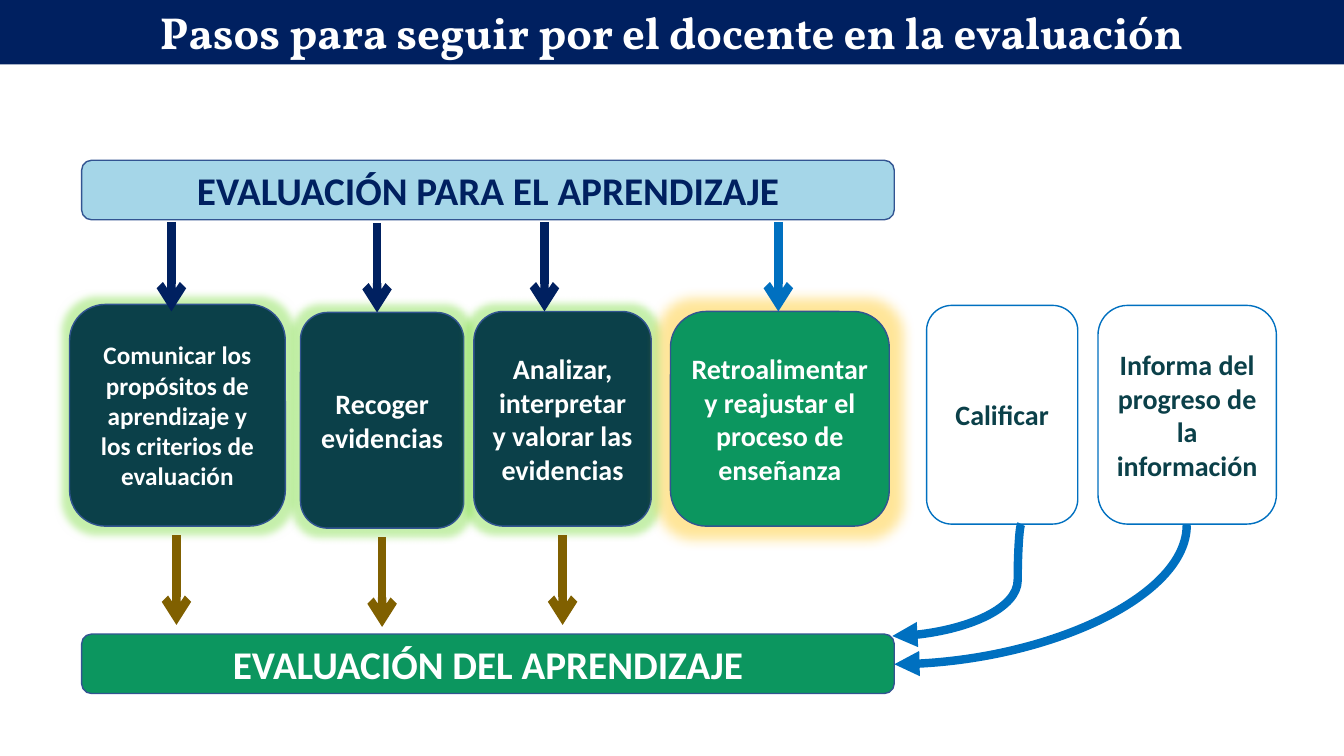
from lxml import etree
from pptx import Presentation
from pptx.dml.color import RGBColor
from pptx.enum.shapes import MSO_CONNECTOR, MSO_SHAPE
from pptx.enum.text import MSO_ANCHOR, MSO_AUTO_SIZE, PP_ALIGN
from pptx.oxml.ns import qn
from pptx.util import Inches, Pt

ROUNDED = MSO_SHAPE.ROUNDED_RECTANGLE
STRAIGHT, CURVED = MSO_CONNECTOR.STRAIGHT, MSO_CONNECTOR.CURVE
TOP, MIDDLE = MSO_ANCHOR.TOP, MSO_ANCHOR.MIDDLE
CENTER = PP_ALIGN.CENTER
NO_AUTOFIT = MSO_AUTO_SIZE.NONE

WHITE = RGBColor(0xFF, 0xFF, 0xFF)
NAVY = RGBColor(0x00, 0x20, 0x60)
BLUE = RGBColor(0x00, 0x70, 0xC0)
OUTLINE = RGBColor(0x32, 0x54, 0x91)
SKY = RGBColor(0xA5, 0xD6, 0xE8)
PETROL = RGBColor(0x0B, 0x40, 0x49)
GREEN = RGBColor(0x0C, 0x96, 0x5F)
OLIVE = RGBColor(0x80, 0x60, 0x00)
LIME = RGBColor(0x70, 0xD9, 0x2F)
AMBER = RGBColor(0xFF, 0xC0, 0x00)

HEADING = "Pasos para seguir por el docente en la evaluación"
BANNERS = [
    ("EVALUACIÓN PARA EL APRENDIZAJE", 1.59, SKY, NAVY),
    ("EVALUACIÓN DEL APRENDIZAJE", 6.29, GREEN, WHITE),
]
LIME_GLOW, AMBER_GLOW = (LIME, 11), (AMBER, 18)
STEPS = [
    ("Comunicar los propósitos de aprendizaje y los criterios de evaluación",
     (0.69, 3.02, 2.14, 2.2), 18, PETROL, OUTLINE, WHITE, LIME_GLOW),
    ("Recoger evidencias",
     (2.98, 3.1, 1.62, 2.14), 20, PETROL, OUTLINE, WHITE, LIME_GLOW),
    ("Analizar, interpretar y valorar las evidencias",
     (4.7, 3.09, 1.76, 2.13), 20, PETROL, OUTLINE, WHITE, LIME_GLOW),
    ("Retroalimentar y reajustar el proceso de enseñanza",
     (6.65, 3.09, 2.17, 2.13), 20, GREEN, OUTLINE, WHITE, AMBER_GLOW),
    ("Calificar",
     (9.19, 3.03, 1.5, 2.17), 20, WHITE, BLUE, PETROL, None),
    ("Informa del progreso de la información",
     (10.89, 3.03, 1.77, 2.17), 20, WHITE, BLUE, PETROL, None),
]
ARROW_DROP = 0.89
DOWN_ARROWS = [
    (1.7, 2.2, NAVY), (3.74, 2.21, NAVY), (5.4, 2.2, NAVY), (7.72, 2.2, BLUE),
    (1.75, 5.31, OLIVE), (3.79, 5.33, OLIVE), (5.58, 5.31, OLIVE),
]

deck = Presentation()
deck.slide_width, deck.slide_height = Inches(13.33), Inches(7.5)
slide = deck.slides.add_slide(deck.slide_layouts[5])


def write(shape, text, size=20, color=WHITE, font="Calibri", anchor=MIDDLE):
    frame = shape.text_frame
    frame.word_wrap = True
    frame.auto_size = NO_AUTOFIT
    frame.vertical_anchor = anchor
    frame.margin_left = frame.margin_right = Inches(0.1)
    frame.margin_top = frame.margin_bottom = Inches(0.05)
    paragraph = frame.paragraphs[0]
    paragraph.alignment = CENTER
    paragraph.line_spacing = 1.0
    run = paragraph.add_run()
    run.text = text
    run.font.name, run.font.size, run.font.bold = font, Pt(size), True
    run.font.color.rgb = color


def add_box(text, place, size, fill, outline, color, glow=None):
    box = slide.shapes.add_shape(ROUNDED, *map(Inches, place))
    box.fill.solid()
    box.fill.fore_color.rgb = fill
    box.line.color.rgb = outline
    box.line.width = Pt(1)
    box.shadow.inherit = False
    if glow:
        tint, radius = glow
        effects = box._element.spPr.find(qn("a:effectLst"))
        halo = etree.SubElement(effects, qn("a:glow"), rad=str(Pt(radius)))
        shade = etree.SubElement(halo, qn("a:srgbClr"), val=str(tint))
        etree.SubElement(shade, qn("a:alpha"), val="40000")
    write(box, text, size=size, color=color)


def add_arrow(kind, start, end, color, head):
    arrow = slide.shapes.add_connector(kind, *map(Inches, start + end))
    arrow.line.color.rgb = color
    arrow.line.width = Pt(6)
    properties = arrow._element.spPr
    etree.SubElement(properties.find(qn("a:ln")), qn("a:tailEnd"), type=head)
    etree.SubElement(properties, qn("a:effectLst"))
    return properties


heading = slide.shapes.title
heading.left, heading.top = 0, 0
heading.width, heading.height = deck.slide_width, Inches(0.64)
heading.fill.solid()
heading.fill.fore_color.rgb = NAVY
write(heading, HEADING, size=32, font="Vollkorn", anchor=TOP)

for text, top, fill, color in BANNERS:
    add_box(text, (0.81, top, 8.06, 0.59), 28, fill, OUTLINE, color)
for step in STEPS:
    add_box(*step)
for x, y, color in DOWN_ARROWS:
    add_arrow(STRAIGHT, (x, y), (x, y + ARROW_DROP), color, "arrow")

grade_curve = add_arrow(CURVED, (10.13, 5.2), (8.85, 6.31), BLUE, "triangle")
guides = grade_curve.find(qn("a:prstGeom")).get_or_add_avLst()
etree.SubElement(guides, qn("a:gd"), name="adj1", fmla="val 2800")

report_curve = add_arrow(CURVED, (9.63, 4.45), (11.01, 7.35), BLUE, "triangle")
report_curve.find(qn("a:prstGeom")).set("prst", "curvedConnector2")
report_curve.find(qn("a:xfrm")).set("rot", str(90 * 60000))

deck.save("out.pptx")
